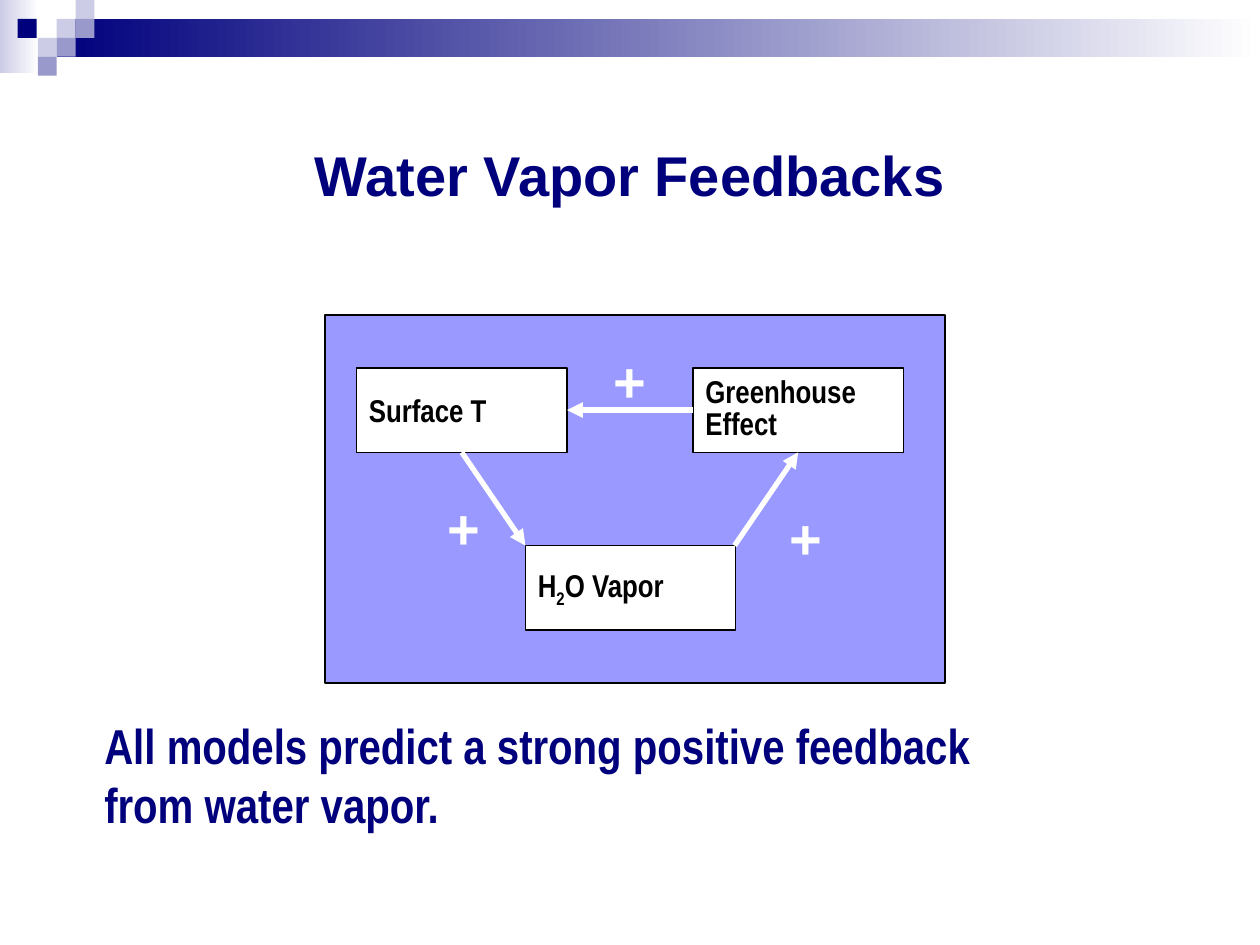
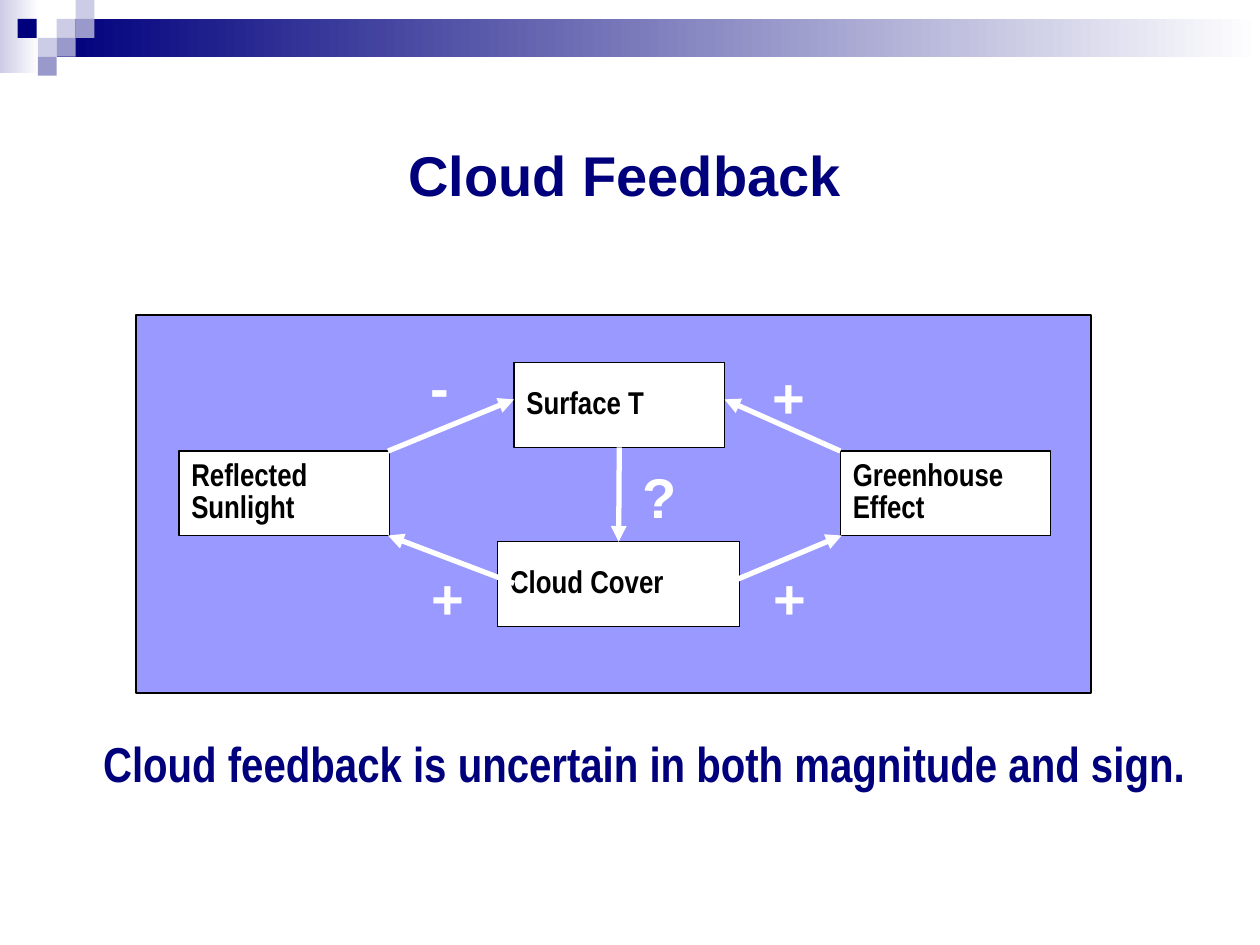
from pptx import Presentation
from pptx.dml.color import RGBColor
from pptx.enum.shapes import MSO_CONNECTOR, MSO_SHAPE
from pptx.enum.text import MSO_ANCHOR, PP_ALIGN
from pptx.oxml.ns import qn
from pptx.util import Inches, Pt
from lxml import etree

NAVY = RGBColor(0x00, 0x00, 0x7D)
LAVENDER = RGBColor(0xCC, 0xCC, 0xE6)
SLATE = RGBColor(0x99, 0x99, 0xCC)
PERIWINKLE = RGBColor(0x99, 0x99, 0xFF)
WHITE = RGBColor(0xFF, 0xFF, 0xFF)
BLACK = RGBColor(0x00, 0x00, 0x00)

RECT = MSO_SHAPE.RECTANGLE
PROCESS = MSO_SHAPE.FLOWCHART_PROCESS
STRAIGHT = MSO_CONNECTOR.STRAIGHT
TOP, MIDDLE = MSO_ANCHOR.TOP, MSO_ANCHOR.MIDDLE
LEFT, CENTER = PP_ALIGN.LEFT, PP_ALIGN.CENTER

SANS, NARROW = "Arial", "Arial Narrow"
BOX_W, BOX_H = 1.67, 0.67
TILE = 0.15
TILES = [
    (0.45, 0.15, LAVENDER),
    (0.6, 0, LAVENDER),
    (0.6, 0.15, SLATE),
    (0.3, 0.3, LAVENDER),
    (0.14, 0.15, NAVY),
    (0.45, 0.3, SLATE),
    (0.3, 0.45, SLATE),
]


def add_block(s, x, y, w, h, color, kind=RECT, outlined=False):
    sp = s.shapes.add_shape(kind, Inches(x), Inches(y), Inches(w), Inches(h))
    sp.shadow.inherit = False
    sp.fill.solid()
    sp.fill.fore_color.rgb = color
    if outlined:
        sp.line.color.rgb = BLACK
        sp.line.width = Pt(0.75)
    else:
        sp.line.fill.background()
    return sp


def add_fade(s, x, y, w, h, color):
    sp = add_block(s, x, y, w, h, color)
    sp.fill.gradient()
    sp.fill.gradient_angle = 0
    for stop, rgb in zip(sp.fill.gradient_stops, (color, WHITE)):
        stop.color.rgb = rgb


def write(sp, lines, font, size, color, anchor=TOP, align=LEFT, spacing=None):
    tf = sp.text_frame
    tf.word_wrap = True
    tf.vertical_anchor = anchor
    for i, line in enumerate(lines):
        p = tf.add_paragraph() if i else tf.paragraphs[0]
        p.alignment = align
        if spacing:
            p.line_spacing = spacing
        p.font.name = font
        p.font.size = Pt(size)
        p.font.bold = True
        p.font.color.rgb = color
        for j, part in enumerate(line.split("_")):
            r = p.add_run()
            r.text = part
            if j == 1:
                r.font._element.set("baseline", "-25000")


def add_text(s, x, y, w, h, lines, font, size, color, **layout):
    sp = s.shapes.add_textbox(Inches(x), Inches(y), Inches(w), Inches(h))
    write(sp, lines, font, size, color, **layout)


def add_title(s, text, x, w):
    add_text(s, x, 0.67, w, 1.42, [text], SANS, 32, NAVY, anchor=MIDDLE, align=CENTER)


def add_caption(s, x, y, w, h, *lines):
    add_text(s, x, y, w, h, lines, NARROW, 28, NAVY)


def add_sign(s, text, x, y, w=0.46):
    add_text(s, x, y, w, 0.63, [text], SANS, 32, WHITE)


def add_box(s, x, y, *lines, w=BOX_W, spacing=0.85):
    sp = add_block(s, x, y, w, BOX_H, WHITE, PROCESS, outlined=True)
    write(sp, lines, NARROW, 18, BLACK, anchor=MIDDLE, spacing=spacing)
    return sp


def add_arrow(s, start, end, begin=None, finish=None):
    cx = s.shapes.add_connector(STRAIGHT, *(Inches(v) for v in (*start, *end)))
    if begin:
        cx.begin_connect(*begin)
    if finish:
        cx.end_connect(*finish)
    cx.line.color.rgb = WHITE
    cx.line.width = Pt(3)
    etree.SubElement(cx.line._get_or_add_ln(), qn("a:tailEnd"), type="triangle")
    etree.SubElement(cx._element.spPr, qn("a:effectLst"))


def add_slide(prs):
    s = prs.slides.add_slide(prs.slide_layouts[6])
    add_fade(s, 0, 0, 0.31, 0.58, LAVENDER)
    add_fade(s, 0.45, 0.15, 9.55, 0.3, NAVY)
    for x, y, color in TILES:
        add_block(s, x, y, TILE, TILE, color)
    return s


def water_vapor_slide(prs):
    s = add_slide(prs)
    add_block(s, 2.58, 2.5, 4.92, 2.92, PERIWINKLE, outlined=True)
    add_title(s, "Water Vapor Feedbacks", 0, 10)
    surface = add_box(s, 2.83, 2.92, "Surface T", spacing=None)
    add_box(s, 4.17, 4.33, "H_2_O Vapor", spacing=None)
    greenhouse = add_box(s, 5.5, 2.92, "Greenhouse", "Effect")
    add_arrow(s, (3.67, 3.58), (4.17, 4.33), begin=(surface, 2))
    add_arrow(s, (5.83, 4.33), (6.33, 3.58), finish=(greenhouse, 2))
    add_arrow(s, (5.5, 3.25), (4.5, 3.25), (greenhouse, 1), (surface, 3))
    for x, y in [(3.45, 3.87), (6.17, 3.95), (4.77, 2.7)]:
        add_sign(s, "+", x, y)
    add_caption(s, 0.73, 5.63, 8.5, 1.03,
                "All models predict a strong positive feedback", "from water vapor.")


def cloud_slide(prs):
    s = add_slide(prs)
    add_block(s, 1.08, 2.5, 7.58, 3, PERIWINKLE, outlined=True)
    add_title(s, "Cloud Feedback", 0.17, 9.58)
    add_box(s, 1.42, 3.58, "Reflected", "Sunlight")
    cloud = add_box(s, 3.95, 4.3, "Cloud Cover", w=1.92)
    surface = add_box(s, 4.08, 2.88, "Surface T")
    add_box(s, 6.67, 3.58, "Greenhouse", "Effect")
    add_arrow(s, (4.92, 3.55), (4.92, 4.3), (surface, 2), (cloud, 0))
    add_arrow(s, (4.08, 4.63), (3.08, 4.25))
    add_arrow(s, (3.08, 3.58), (4.08, 3.17))
    add_arrow(s, (6.67, 3.58), (5.75, 3.17))
    add_arrow(s, (5.68, 4.67), (6.68, 4.25))
    for x, y in [(3.33, 4.42), (6.04, 4.42), (6.03, 2.83)]:
        add_sign(s, "+", x, y)
    add_sign(s, "?", 5, 3.62, 0.47)
    add_sign(s, "-", 3.32, 2.75, 0.35)
    add_caption(s, 0.72, 5.77, 8.95, 0.57,
                "Cloud feedback is uncertain in both magnitude and sign.")


def main():
    prs = Presentation()
    prs.slide_width, prs.slide_height = Inches(10), Inches(7.5)
    water_vapor_slide(prs)
    cloud_slide(prs)
    prs.save("out.pptx")


if __name__ == "__main__":
    main()
